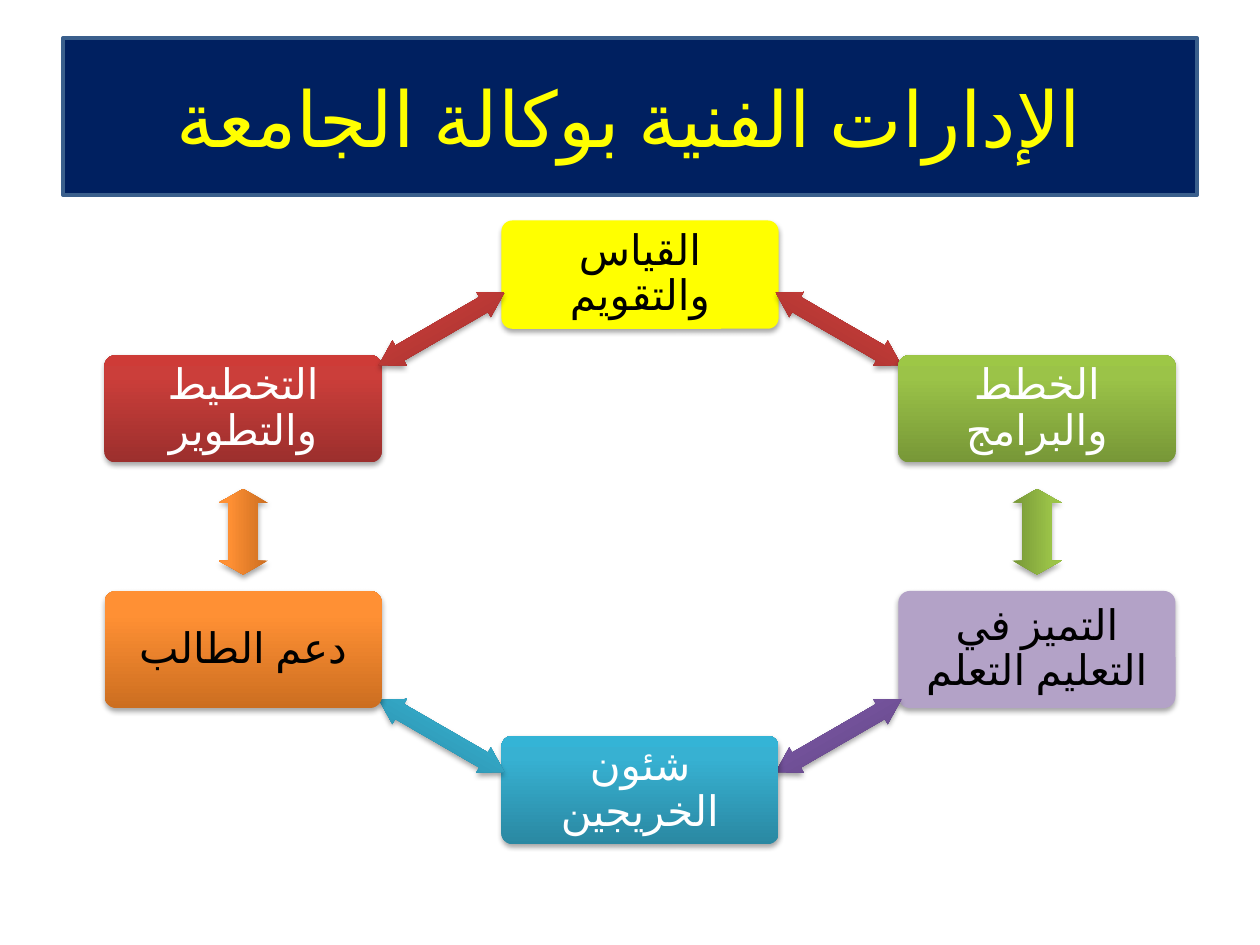
from copy import deepcopy
from dataclasses import dataclass

from lxml.etree import SubElement
from pptx import Presentation
from pptx.dml.color import RGBColor
from pptx.enum.lang import MSO_LANGUAGE_ID
from pptx.enum.shapes import MSO_SHAPE
from pptx.enum.text import MSO_ANCHOR, PP_ALIGN
from pptx.oxml.ns import qn
from pptx.util import Inches, Pt


@dataclass(frozen=True)
class Theme:
    font: str = "Calibri"
    title_size: int = 44
    label_size: int = 24
    navy: str = "002060"
    title_line: str = "3A5F8C"
    yellow: str = "FFFF00"
    black: str = "000000"
    white: str = "FFFFFF"
    # A single colour is a plain fill; three run from bottom to top.
    lemon: tuple = ("FFFF00",)
    lilac: tuple = ("B3A2C7",)
    red: tuple = ("9C2F2D", "CB3E3A", "CE3B37")
    green: tuple = ("779737", "9BC348", "9DC746")
    purple: tuple = ("5F4480", "7B58A6", "7C57A8")
    teal: tuple = ("2A88A2", "37B1D2", "34B4D6")
    orange: tuple = ("CC6E20", "FF9034", "FF9136")


@dataclass(frozen=True)
class Department:
    label: str
    column: int
    top: float
    height: float
    fill: tuple
    text_color: str


@dataclass(frozen=True)
class Link:
    column: float
    middle: float
    rotation: int
    fill: tuple


THEME = Theme()
GRADIENT_POSITIONS = (0, 0.8, 1)
BOX_WIDTH = 2.2
FIRST_LEFT, COLUMN_STEP = 0.83, 3.15
UPPER_LINK, SIDE_LINK, LOWER_LINK = 2.61, 4.22, 5.84

# Clockwise from the top, each department followed by its link to the next
RING = [
    (Department("القياس والتقويم", 1, 1.75, 0.86, THEME.lemon, THEME.black),
     Link(1.5, UPPER_LINK, 30, THEME.red)),
    (Department("الخطط والبرامج", 2, 2.82, 0.85, THEME.green, THEME.white),
     Link(2, SIDE_LINK, 90, THEME.green)),
    (Department("التميز في التعليم التعلم", 2, 4.69, 0.93, THEME.lilac, THEME.black),
     Link(1.5, LOWER_LINK, 330, THEME.purple)),
    (Department("شئون الخريجين", 1, 5.84, 0.86, THEME.teal, THEME.white),
     Link(0.5, LOWER_LINK, 30, THEME.teal)),
    (Department("دعم الطالب", 0, 4.69, 0.93, THEME.orange, THEME.black),
     Link(0, SIDE_LINK, 270, THEME.orange)),
    (Department("التخطيط والتطوير", 0, 2.82, 0.85, THEME.red, THEME.white),
     Link(0.5, UPPER_LINK, 330, THEME.red)),
]


def paint(shape, colors: tuple) -> None:
    """Fill with a plain colour or a vertical gradient, without outline."""
    if len(colors) == 1:
        shape.fill.solid()
        shape.fill.fore_color.rgb = RGBColor.from_string(colors[0])
    else:
        shape.fill.gradient()
        shape.fill.gradient_angle = 90
        stop_list = shape._element.spPr.find(".//" + qn("a:gsLst"))
        stop_list.append(deepcopy(stop_list[-1]))
        stops = shape.fill.gradient_stops
        for stop, color, position in zip(stops, colors, GRADIENT_POSITIONS):
            stop.color.rgb = RGBColor.from_string(color)
            stop.position = position
    shape.line.fill.background()


def add_shadow(shape) -> None:
    """Cast a soft shadow straight down."""
    shape.shadow.inherit = False
    effects = shape._element.spPr.find(qn("a:effectLst"))
    shadow = SubElement(effects, qn("a:outerShdw"), blurRad=str(Pt(3.1)),
                        dist=str(Pt(1.8)), dir="5400000", rotWithShape="0")
    color = SubElement(shadow, qn("a:srgbClr"), val=THEME.black)
    SubElement(color, qn("a:alpha"), val="35000")


def write(shape, text: str, size: int, color: str):
    """Write one centred right-to-left paragraph and return it."""
    frame = shape.text_frame
    frame.word_wrap = True
    frame.vertical_anchor = MSO_ANCHOR.MIDDLE
    para = frame.paragraphs[0]
    para.alignment = PP_ALIGN.CENTER
    para._p.get_or_add_pPr().set("rtl", "1")
    span = para.add_run()
    span.text = text
    span.font.size = Pt(size)
    span.font.color.rgb = RGBColor.from_string(color)
    span.font.name = THEME.font
    span.font.language_id = MSO_LANGUAGE_ID.ARABIC
    return para


def add_title(page, text: str) -> None:
    title = page.shapes.title
    title.left, title.top = Inches(0.5), Inches(0.3)
    title.width, title.height = Inches(9), Inches(1.25)
    title.fill.solid()
    title.fill.fore_color.rgb = RGBColor.from_string(THEME.navy)
    title.line.color.rgb = RGBColor.from_string(THEME.title_line)
    title.line.width = Pt(2)
    write(title, text, THEME.title_size, THEME.yellow)


def add_department(page, department: Department) -> None:
    left = FIRST_LEFT + department.column * COLUMN_STEP
    box = page.shapes.add_shape(
        MSO_SHAPE.ROUNDED_RECTANGLE, Inches(left), Inches(department.top),
        Inches(BOX_WIDTH), Inches(department.height))
    box.adjustments[0] = 0.1
    paint(box, department.fill)
    add_shadow(box)
    frame = box.text_frame
    frame.margin_left = frame.margin_right = Inches(0.07)
    frame.margin_top = frame.margin_bottom = Inches(0.07)
    para = write(box, department.label, THEME.label_size, department.text_color)
    para.line_spacing = 0.9


def add_link(page, link: Link) -> None:
    upright = link.rotation in (90, 270)
    width, height, head = (0.68, 0.39, 0.11) if upright else (1.15, 0.23, 0.19)
    center = FIRST_LEFT + BOX_WIDTH / 2 + link.column * COLUMN_STEP
    arrow = page.shapes.add_shape(
        MSO_SHAPE.LEFT_RIGHT_ARROW, Inches(center - width / 2),
        Inches(link.middle - height / 2), Inches(width), Inches(height))
    arrow.adjustments[0] = 0.6
    arrow.adjustments[1] = head / height
    arrow.rotation = link.rotation
    paint(arrow, link.fill)
    add_shadow(arrow)


def main() -> None:
    deck = Presentation()
    deck.slide_width, deck.slide_height = Inches(10), Inches(7.5)
    page = deck.slides.add_slide(deck.slide_layouts[5])
    add_title(page, "الإدارات الفنية بوكالة الجامعة")
    for department, link in RING:
        add_department(page, department)
        add_link(page, link)
    deck.save("out.pptx")


if __name__ == "__main__":
    main()
